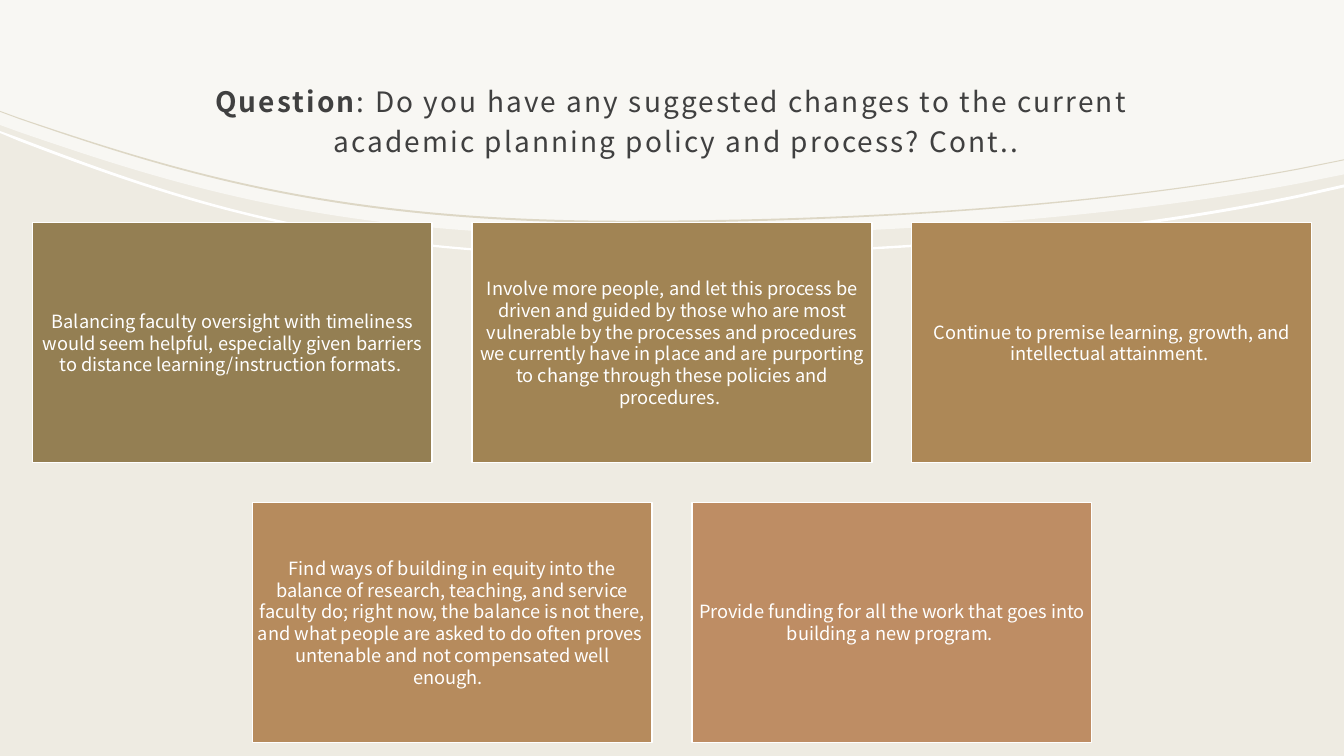
"""Build the slide of suggested changes to the academic planning policy."""
from dataclasses import dataclass
from typing import Optional

from lxml.etree import SubElement
from pptx import Presentation
from pptx.dml.color import RGBColor
from pptx.enum.shapes import MSO_SHAPE as Preset
from pptx.enum.text import MSO_ANCHOR as Anchor, MSO_AUTO_SIZE as AutoSize, PP_ALIGN as Align
from pptx.oxml.ns import qn
from pptx.util import Pt

FONT = "Noto Sans CJK JP"
HARD_SPACE = chr(160)
WHITE = RGBColor(0xFF, 0xFF, 0xFF)
CREAM = RGBColor(0xEE, 0xEB, 0xE2)
SAND = RGBColor(0xDD, 0xD7, 0xC5)
CHARCOAL = RGBColor(0x40, 0x40, 0x40)
OLIVE = RGBColor(0x94, 0x7F, 0x53)
KHAKI = RGBColor(0xA1, 0x84, 0x54)
OCHRE = RGBColor(0xAD, 0x88, 0x57)
TAN = RGBColor(0xB6, 0x8B, 0x5D)
CLAY = RGBColor(0xBE, 0x8D, 0x64)

PAGE_WIDTH, PAGE_HEIGHT = 960, 540
TILE_WIDTH, TILE_HEIGHT, TILE_GAP = 285.6, 171.4, 28.5
TILES_TOP = 159.1
CURVE_X = (0, 13.7, 128.9, 239.8, 446.4, 630, 798.5, 928.1, PAGE_WIDTH)


@dataclass(frozen=True)
class Swoosh:
    """Area between two sweeping edges at CURVE_X, or below the page top."""
    lower: tuple
    color: RGBColor
    upper: Optional[tuple] = None
    opacity: Optional[int] = None


@dataclass(frozen=True)
class Tile:
    """One answer and the colour of its rectangle."""
    text: str
    color: RGBColor


PANEL = Swoosh(
    (89.3, 94.3, 133.9, 168.5, 168.5, 168.5, 155.5, 131, 124.6), WHITE, opacity=60)
WHITE_BAND = Swoosh(
    (95, 100.8, 144.7, 182.9, 182.9, 182.9, 168.5, 141.1, 133.9), WHITE,
    upper=(93.6, 98.6, 142.6, 181.4, 181.4, 181.4, 166.3, 139, 131.8))
SAND_LINE = Swoosh(
    (79.9, 85, 124.6, 159.1, 159.1, 159.1, 145.4, 121, 114.5), SAND,
    upper=(79.2, 84.2, 123.1, 157.7, 157.7, 157.7, 144.7, 120.2, 113.8))

TILE_ROWS = (
    (
        Tile("Balancing faculty oversight with timeliness would seem helpful, especially "
             f"given barriers to distance learning/instruction formats.{HARD_SPACE}", OLIVE),
        Tile("Involve more people, and let this process be driven and guided by those who "
             "are most vulnerable by the processes and procedures we currently have in "
             "place and are purporting to change through these policies and "
             f"procedures.{HARD_SPACE}", KHAKI),
        Tile("Continue to premise learning, growth, and intellectual "
             f"attainment.{HARD_SPACE}", OCHRE),
    ),
    (
        Tile("Find ways of building in equity into the balance of research, teaching, and "
             "service faculty do; right now, the balance is not there, and what people are "
             f"asked to do often proves{HARD_SPACE} untenable and not compensated well "
             f"enough.{HARD_SPACE}{HARD_SPACE}", TAN),
        Tile("Provide funding for all the work that goes into building a new "
             f"program.{HARD_SPACE}", CLAY),
    ),
)


def add_span(para, text: str, *, size: float, color: RGBColor,
             bold: bool = False, spacing: float = 0) -> None:
    """Append formatted text to a paragraph."""
    span = para.add_run()
    span.text = text
    span.font.name = FONT
    span.font.size = Pt(size)
    span.font.bold = bold
    span.font.color.rgb = color
    if spacing:
        span.font._element.set("spc", str(round(spacing * 100)))


def set_frame(frame, left: float, top: float, right: float, bottom: float) -> None:
    """Set insets, wrapping and middle anchoring of a text frame."""
    frame.margin_left, frame.margin_top = Pt(left), Pt(top)
    frame.margin_right, frame.margin_bottom = Pt(right), Pt(bottom)
    frame.word_wrap = True
    frame.auto_size = AutoSize.NONE
    frame.vertical_anchor = Anchor.MIDDLE


def bend(shape, starts: list) -> None:
    """Turn each three line segments from a start index into one cubic curve."""
    segments = list(shape.element.iter(qn("a:lnTo")))
    for start in starts:
        triple = segments[start:start + 3]
        curve = triple[0]
        for segment in triple[1:]:
            curve.append(segment[0])
            segment.getparent().remove(segment)
        curve.tag = qn("a:cubicBezTo")


def add_swoosh(page, swoosh: Swoosh) -> None:
    """Draw a filled swoosh across the page."""
    if swoosh.upper:
        top = list(zip(CURVE_X, swoosh.upper))
        starts = [1, 4]
    else:
        top = [(0, 0), (PAGE_WIDTH, 0)]
        starts = []
    outline = top + list(zip(CURVE_X, swoosh.lower))[::-1]
    points = [(Pt(x), Pt(y)) for x, y in outline]
    builder = page.shapes.build_freeform(*points[0])
    builder.add_line_segments(points[1:], close=True)
    shape = builder.convert_to_shape()
    bend(shape, starts + [len(top) + 1, len(top) + 4])
    shape.shadow.inherit = False
    shape.fill.solid()
    shape.fill.fore_color.rgb = swoosh.color
    shape.line.fill.background()
    if swoosh.opacity is not None:
        color = shape.element.spPr.find(qn("a:solidFill")).find(qn("a:srgbClr"))
        SubElement(color, qn("a:alpha"), val=str(swoosh.opacity * 1000))


def add_tile(page, tile: Tile, left: float, top: float) -> None:
    """Draw one answer rectangle with its text."""
    box = page.shapes.add_shape(
        Preset.RECTANGLE, Pt(left), Pt(top), Pt(TILE_WIDTH), Pt(TILE_HEIGHT))
    box.shadow.inherit = False
    box.fill.solid()
    box.fill.fore_color.rgb = tile.color
    box.line.color.rgb = WHITE
    box.line.width = Pt(1)
    set_frame(box.text_frame, 3.6, 3.6, 3.6, 3.6)
    para = box.text_frame.paragraphs[0]
    para.alignment = Align.CENTER
    para.line_spacing = 1.0
    add_span(para, tile.text, size=13, color=WHITE)


def format_title(page) -> None:
    """Place and fill the title, in front of what is drawn so far."""
    title = page.shapes.title
    title.left, title.top, title.width, title.height = Pt(96), Pt(42.5), Pt(768), Pt(82)
    set_frame(title.text_frame, 8.6, 8.6, 8.6, 7.2)
    para = title.text_frame.paragraphs[0]
    para.alignment = Align.CENTER
    para.line_spacing = 1.2
    style = dict(size=20, color=CHARCOAL, spacing=1.5)
    add_span(para, "Question", bold=True, **style)
    add_span(para, ": Do you have any suggested changes to the current", **style)
    para.add_line_break()
    add_span(para, " academic planning policy and process? Cont..", **style)
    title.element.getparent().append(title.element)


def main() -> None:
    """Build and save the deck."""
    deck = Presentation()
    deck.slide_width, deck.slide_height = Pt(PAGE_WIDTH), Pt(PAGE_HEIGHT)
    page = deck.slides.add_slide(deck.slide_layouts[5])
    page.background.fill.solid()
    page.background.fill.fore_color.rgb = CREAM
    add_swoosh(page, PANEL)
    add_swoosh(page, WHITE_BAND)
    format_title(page)
    add_swoosh(page, SAND_LINE)
    pitch = TILE_WIDTH + TILE_GAP
    for row, tiles in enumerate(TILE_ROWS):
        start = (PAGE_WIDTH - len(tiles) * pitch + TILE_GAP) / 2
        for column, tile in enumerate(tiles):
            add_tile(page, tile, start + column * pitch,
                     TILES_TOP + row * (TILE_HEIGHT + TILE_GAP))
    deck.save("out.pptx")


if __name__ == "__main__":
    main()
